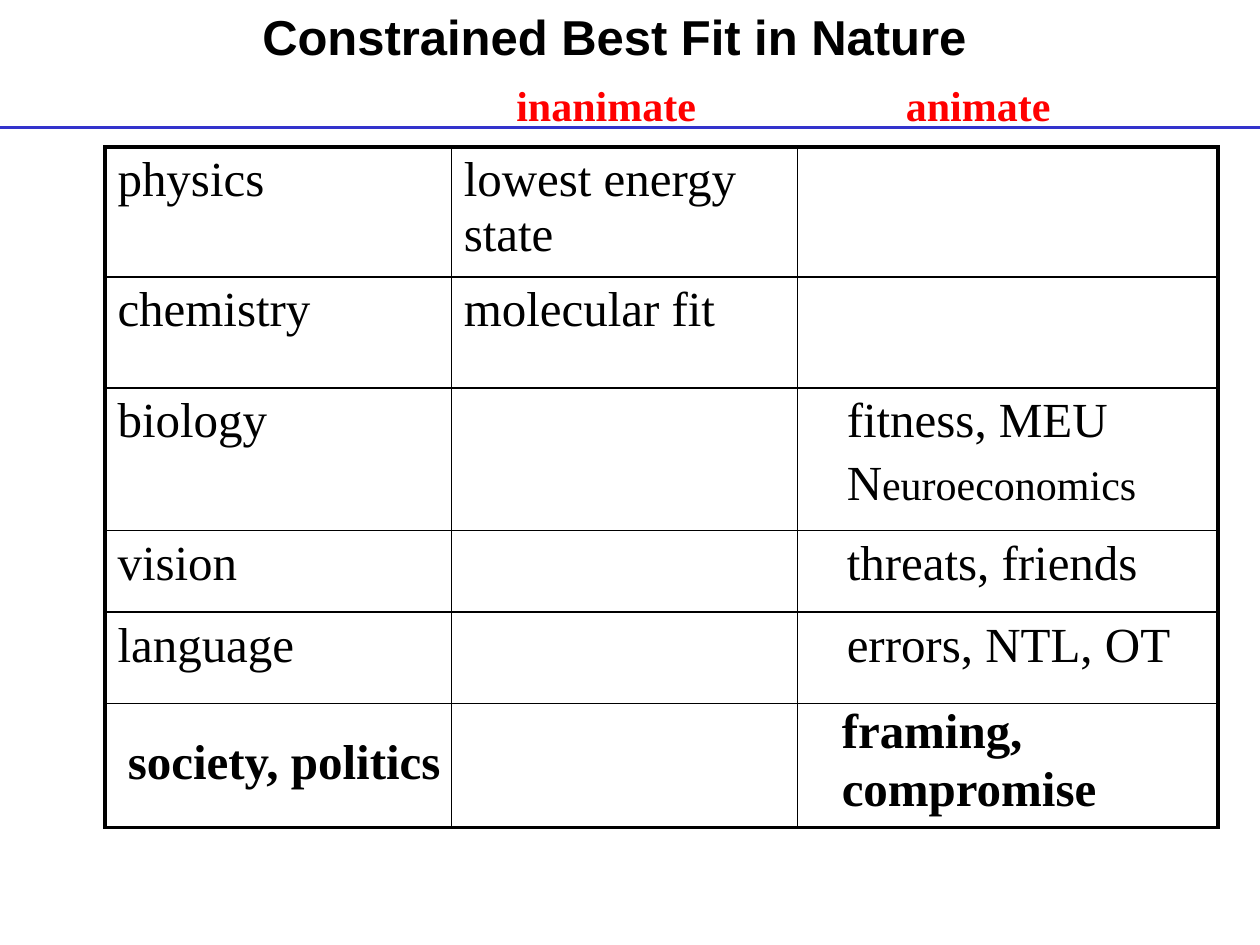
from lxml.etree import SubElement
from pptx import Presentation
from pptx.dml.color import RGBColor
from pptx.enum.shapes import MSO_CONNECTOR
from pptx.enum.text import PP_ALIGN
from pptx.oxml.ns import qn
from pptx.util import Cm, Pt

BLACK, RED, BLUE = "000000", "FF0000", "3333CC"
SERIF, SANS = "Times New Roman", "Arial"
BODY = 28


def rgb(value):
    return RGBColor.from_string(value)


class SlideBuilder:
    def __init__(self, slide, font=SERIF, color=BLACK):
        self.slide, self.font, self.color = slide, font, color

    def style(self, p, size=BODY, bold=False, font=None, color=None):
        p.font.name = font or self.font
        p.font.size = Pt(size)
        p.font.bold = bold
        p.font.color.rgb = rgb(color or self.color)

    def text(self, x, y, w, h, text, align=PP_ALIGN.LEFT, tab=None, **look):
        tf = self.slide.shapes.add_textbox(Cm(x), Cm(y), Cm(w), Cm(h)).text_frame
        tf.word_wrap = True
        p = tf.paragraphs[0]
        p.text = text
        p.alignment = align
        self.style(p, bold=True, **look)
        if tab:
            tabs = p._p.get_or_add_pPr()
            stops = tabs.makeelement(qn("a:tabLst"))
            SubElement(stops, qn("a:tab"), pos=str(Cm(tab)), algn="l")
            tabs.find(qn("a:defRPr")).addprevious(stops)

    def line(self, x1, x2, y, width, color):
        cxn = self.slide.shapes.add_connector(
            MSO_CONNECTOR.STRAIGHT, Cm(x1), Cm(y), Cm(x2), Cm(y))
        cxn.line.width = Pt(width)
        cxn.line.color.rgb = rgb(color)
        SubElement(cxn._element.spPr, qn("a:effectLst"))

    def borders(self, cell, widths):
        tcPr = cell._tc.get_or_add_tcPr()
        for i, (side, width) in enumerate(widths.items()):
            ln = tcPr.makeelement(qn(f"a:ln{side}"), w=str(Pt(width)))
            fill = SubElement(ln, qn("a:solidFill"))
            SubElement(fill, qn("a:srgbClr"), val=self.color)
            tcPr.insert(i, ln)

    def table(self, x, y, cols, rows, content, indents, inner=1, outer=2.25):
        table = self.slide.shapes.add_table(
            len(rows), len(cols), Cm(x), Cm(y), Cm(sum(cols)), Cm(sum(rows))).table
        table.first_row = table.horz_banding = False
        for col, width in zip(table.columns, cols):
            col.width = Cm(width)
        for row, height in zip(table.rows, rows):
            row.height = Cm(height)
        last_r, last_c = len(rows) - 1, len(cols) - 1
        for r, row in enumerate(content):
            for c, paragraphs in enumerate(row):
                cell = table.cell(r, c)
                cell.fill.background()
                cell.margin_left = Cm(indents[c])
                edges = {"L": c == 0, "R": c == last_c, "T": r == 0, "B": r == last_r}
                self.borders(cell, {k: outer if edge else inner
                                    for k, edge in edges.items()})
                self.fill_cell(cell.text_frame, paragraphs)

    def fill_cell(self, tf, paragraphs):
        for i, runs in enumerate(paragraphs):
            p = tf.add_paragraph() if i else tf.paragraphs[0]
            self.style(p)
            p.space_before = Pt(4.5)
            for text, size in runs:
                r = p.add_run()
                r.text = text
                r.font.size = Pt(size)


def plain(text):
    return [[(text, BODY)]]


def main():
    prs = Presentation()
    prs.slide_width, prs.slide_height = Cm(25.4), Cm(19.05)
    s = SlideBuilder(prs.slides.add_slide(prs.slide_layouts[6]))

    # Rule below the heading
    s.line(0, 25.4, 2.57, 2.25, BLUE)

    # Table of fields and their best-fit criteria
    fitness = plain("fitness, MEU") + [[("N", BODY), ("euroeconomics", 24)]]
    content = [
        [plain("physics"), plain("lowest energy state"), []],
        [plain("chemistry"), plain("molecular fit"), []],
        [plain("biology"), [], fitness],
        [plain("vision"), [], plain("threats, friends")],
        [plain("language"), [], plain("errors, NTL, OT")],
    ]
    s.table(2.12, 2.96, [6.98, 6.98, 8.47], [2.62, 2.24, 2.87, 1.65, 4.34],
            content, indents=[0.25, 0.25, 0.99])

    # Title and column headings
    s.text(2.12, 0, 20.53, 1.45, "Constrained Best Fit in Nature",
           align=PP_ALIGN.CENTER, font=SANS)
    s.text(10.16, 1.48, 11.86, 1.3, "inanimate\tanimate", tab=7.85,
           size=24, color=RED)

    # Added bottom row
    s.line(2.12, 24.55, 14.18, 0.75, BLACK)
    s.text(2.33, 14.6, 6.99, 1.45, "society, politics")
    s.text(16.72, 13.97, 8.26, 2.62, "framing, compromise")

    prs.save("out.pptx")


if __name__ == "__main__":
    main()
